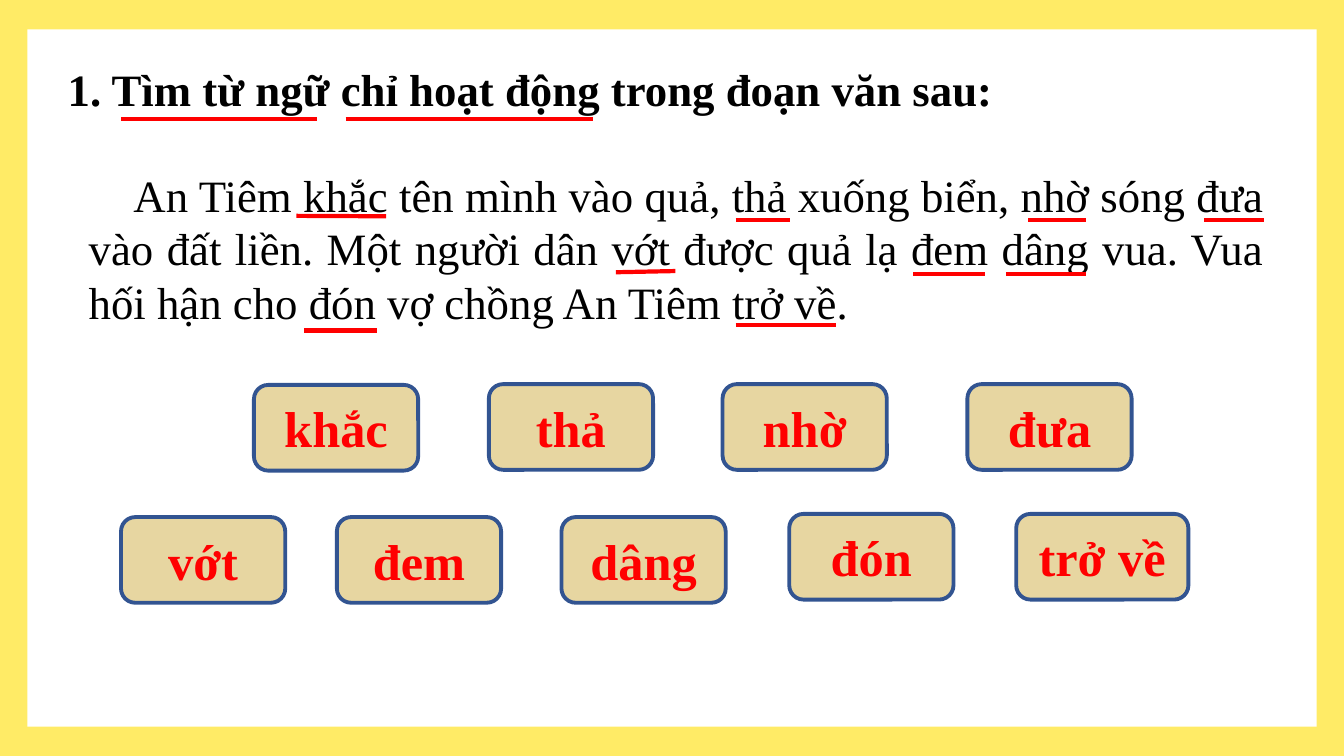
import pptx
import pptx.util
import pptx.dml.color
import pptx.enum.shapes
import pptx.enum.text
import pptx.oxml.ns
import lxml.etree
from dataclasses import dataclass

Cm, Pt = pptx.util.Cm, pptx.util.Pt
RGB = pptx.dml.color.RGBColor.from_string
SHAPES = pptx.enum.shapes.MSO_SHAPE
ALIGN = pptx.enum.text.PP_ALIGN
ANCHOR = pptx.enum.text.MSO_ANCHOR
qn = pptx.oxml.ns.qn


@dataclass(frozen=True)
class Theme:
    font: str = "Times New Roman"
    frame: str = "FFEB66"
    paper: str = "FFFFFF"
    ink: str = "000000"
    accent: str = "FF0000"
    card_fill: str = "BF9000"
    card_border: str = "325491"
    card_opacity: int = 37
    text_size: int = 32
    card_size: int = 36
    underline_width: float = 3
    border_width: float = 2.75


THEME = Theme()
SLIDE_W, SLIDE_H = 33.87, 19.05

# Underlines: x start, x end, y start, y end within the text's box, in cm
TITLE_MARKS = [(1.6, 6.55, 1.58, 1.58), (7.26, 13.49, 1.58, 1.58)]
PASSAGE_MARKS = [
    (5.49, 7.75, 1.35, 1.36),     # khắc
    (16.56, 17.93, 1.45, 1.45),   # thả
    (23.93, 25.4, 1.45, 1.45),    # nhờ
    (28.37, 29.87, 1.45, 1.45),   # đưa
    (13.54, 15.04, 2.77, 2.74),   # vớt
    (21.03, 22.84, 2.82, 2.82),   # đem
    (23.37, 25.4, 2.82, 2.82),    # dâng
    (5.69, 7.52, 4.24, 4.24),     # đón
    (16.56, 19.1, 4.11, 4.11),    # trở về
]

# Word cards: word, x and y within the row's box, width, in cm
FIRST_ROW = [("khắc", 0, 0.02, 4.14), ("thả", 5.92, 0, 4.14),
             ("nhờ", 11.81, 0, 4.14), ("đưa", 17.98, 0, 4.14)]
SECOND_ROW = [("vớt", 0, 0.08, 4.14), ("đem", 5.44, 0.08, 4.14),
              ("dâng", 11.1, 0.08, 4.14), ("đón", 16.84, 0, 4.14),
              ("trở về", 22.56, 0, 4.34)]


def place(part, box):
    part.left, part.top, part.width, part.height = map(Cm, box)


def write(part, text, size, color, bold, align, anchor):
    frame = part.text_frame
    frame.text = text
    frame.word_wrap = True
    frame.auto_size = pptx.enum.text.MSO_AUTO_SIZE.NONE
    frame.vertical_anchor = anchor
    paragraph = frame.paragraphs[0]
    paragraph.alignment = align
    paragraph.space_before = Pt(0)
    font = paragraph.runs[0].font
    font.name, font.size, font.bold = THEME.font, Pt(size), bold
    font.color.rgb = RGB(color)
    return paragraph


def add_frame(slide, box, margin_x, margin_y):
    """Yellow border with a white sheet, behind everything else."""
    left, top, width, height = box
    sheet_box = (left + margin_x, top + margin_y,
                 width - 2 * margin_x, height - 2 * margin_y)
    layers = [(box, THEME.frame), (sheet_box, THEME.paper)]
    for depth, (layer_box, color) in enumerate(layers):
        layer = slide.shapes.add_shape(SHAPES.RECTANGLE, *map(Cm, layer_box))
        layer.shadow.inherit = False
        layer.fill.solid()
        layer.fill.fore_color.rgb = RGB(color)
        layer.line.fill.background()
        slide.shapes._spTree.insert(2 + depth, layer._element)


def add_underlines(slide, box, marks):
    left, top = box[:2]
    for x1, x2, y1, y2 in marks:
        underline = slide.shapes.add_connector(
            pptx.enum.shapes.MSO_CONNECTOR.STRAIGHT,
            Cm(left + x1), Cm(top + y1), Cm(left + x2), Cm(top + y2))
        underline.line.color.rgb = RGB(THEME.accent)
        underline.line.width = Pt(THEME.underline_width)
        lxml.etree.SubElement(underline._element.spPr, qn("a:effectLst"))


def add_heading(slide, box):
    heading = slide.shapes.title
    place(heading, box)
    write(heading, "1. Tìm từ ngữ chỉ hoạt động trong đoạn văn sau:",
          THEME.text_size, THEME.ink, True, ALIGN.LEFT, ANCHOR.TOP)
    add_underlines(slide, box, TITLE_MARKS)


def add_passage(slide, box):
    passage = slide.placeholders[1]
    place(passage, box)
    paragraph = write(
        passage,
        "An Tiêm khắc tên mình vào quả, thả xuống biển, nhờ sóng đưa "
        "vào đất liền. Một người dân vớt được quả lạ đem dâng vua. "
        "Vua hối hận cho đón vợ chồng An Tiêm trở về.",
        THEME.text_size, THEME.ink, False, ALIGN.JUSTIFY, ANCHOR.TOP)
    # First-line indent, no bullet
    properties = paragraph._p.get_or_add_pPr()
    properties.set("marL", "0")
    properties.set("indent", str(Cm(1.13)))
    lxml.etree.SubElement(properties, qn("a:buNone"))
    add_underlines(slide, box, PASSAGE_MARKS)


def add_word_row(slide, box, words):
    left, top, height = box
    for word, x, y, width in words:
        card = slide.shapes.add_shape(
            SHAPES.ROUNDED_RECTANGLE,
            Cm(left + x), Cm(top + y), Cm(width), Cm(height))
        card.shadow.inherit = False
        card.fill.solid()
        card.fill.fore_color.rgb = RGB(THEME.card_fill)
        color = card._element.spPr.find(qn("a:solidFill"))[0]
        alpha = lxml.etree.SubElement(color, qn("a:alpha"))
        alpha.set("val", str(THEME.card_opacity * 1000))
        card.line.color.rgb = RGB(THEME.card_border)
        card.line.width = Pt(THEME.border_width)
        write(card, word, THEME.card_size, THEME.accent, True,
              ALIGN.CENTER, ANCHOR.MIDDLE)


def main():
    deck = pptx.Presentation()
    deck.slide_width, deck.slide_height = Cm(SLIDE_W), Cm(SLIDE_H)
    slide = deck.slides.add_slide(deck.slide_layouts[1])
    add_frame(slide, (0, 0, SLIDE_W, SLIDE_H), 0.69, 0.74)
    add_heading(slide, (1.45, 1.42, 31.42, 1.63))
    add_passage(slide, (1.98, 4.09, 30.15, 4.37))
    add_word_row(slide, (6.4, 9.68, 2.16), FIRST_ROW)
    add_word_row(slide, (3.05, 12.95, 2.16), SECOND_ROW)
    deck.save("out.pptx")


if __name__ == "__main__":
    main()
